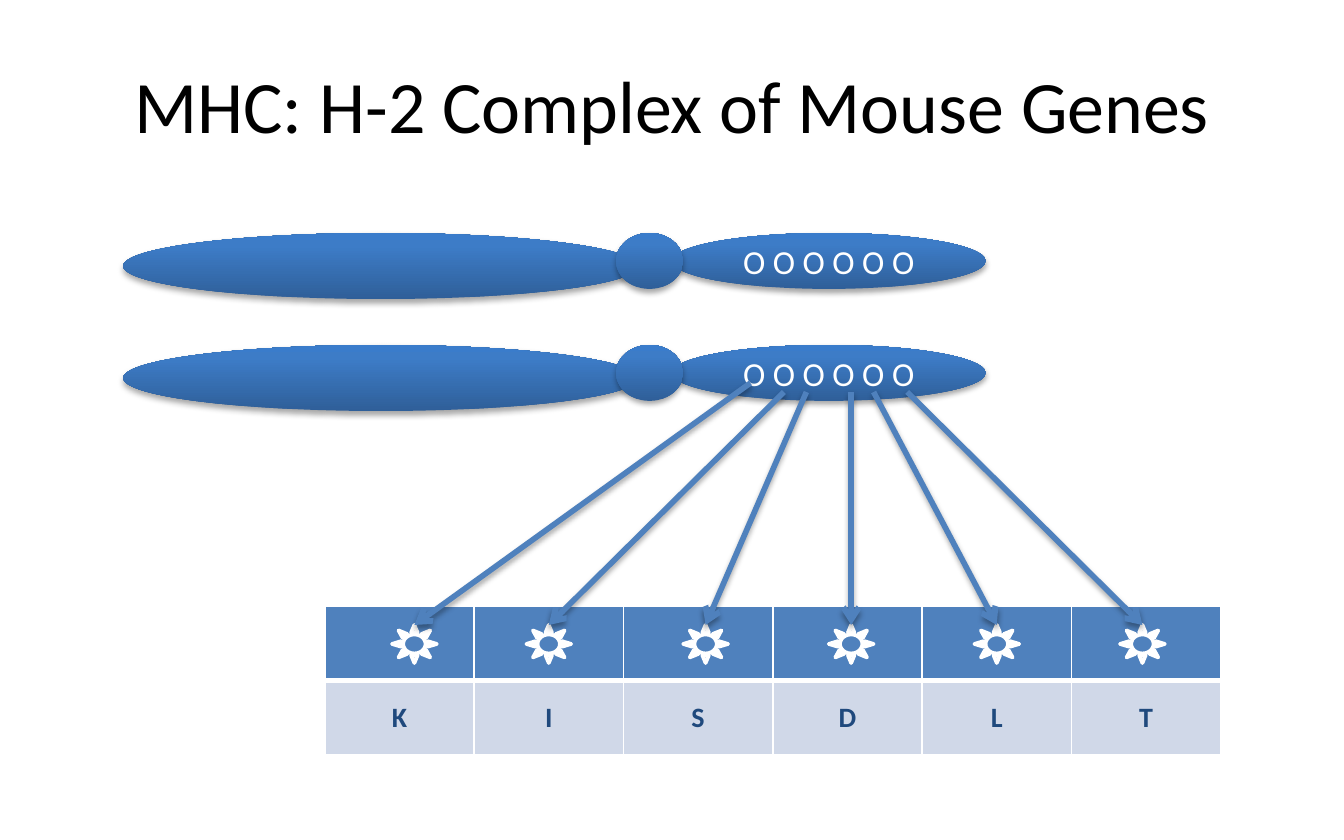
import copy
from dataclasses import dataclass

from lxml import etree
from pptx import Presentation
from pptx import util as u
from pptx.dml.color import RGBColor
from pptx.enum import shapes, text
from pptx.oxml import parse_xml
from pptx.oxml.ns import nsdecls, qn

SCALE = 7620  # EMU in one px, 120 px to the inch


@dataclass(frozen=True)
class Theme:
    font: str = "Calibri"
    title_size: float = 39.6
    locus_size: float = 18
    label_size: float = 15
    black: str = "000000"
    white: str = "FFFFFF"
    blue: str = "4F81BD"
    pale: str = "D0D8E8"
    navy: str = "1F497D"
    gradient: tuple = ((0, "2F5F99"), (0.8, "3D7CC7"), (1, "3A7CCB"))


T = Theme()
GENES = "KISDLT"


def px(*lengths):
    return [u.Emu(round(n * SCALE)) for n in lengths]


def rgb(code):
    return RGBColor.from_string(code)


def add_run(tf, words, size, color, bold=False):
    p = tf.paragraphs[0]
    p.alignment = text.PP_ALIGN.CENTER
    r = p.add_run()
    r.text = words
    r.font.name = T.font
    r.font.size = u.Pt(size)
    r.font.bold = bold
    r.font.color.rgb = rgb(color)


def add_shadow(effects):
    effects.append(parse_xml(
        f'<a:outerShdw {nsdecls("a")} blurRad="{u.Pt(3.1)}" dist="{u.Pt(1.8)}" '
        f'dir="5400000" rotWithShape="0"><a:srgbClr val="{T.black}">'
        '<a:alpha val="35000"/></a:srgbClr></a:outerShdw>'))


def add_title(s, box, words):
    sp = s.shapes.title
    sp.left, sp.top, sp.width, sp.height = px(*box)
    tf = sp.text_frame
    tf.word_wrap = True
    tf.auto_size = text.MSO_AUTO_SIZE.NONE
    tf.vertical_anchor = text.MSO_ANCHOR.MIDDLE
    add_run(tf, words, T.title_size, T.black)


def add_lobe(s, box):
    sp = s.shapes.add_shape(shapes.MSO_SHAPE.OVAL, *px(*box))
    sp.line.fill.background()
    sp.fill.gradient()
    sp.fill.gradient_angle = 90
    # A new gradient has two stops; add the third
    stops = sp._element.spPr.find(".//" + qn("a:gsLst"))
    stops.append(copy.deepcopy(stops[-1]))
    for stop, (position, color) in zip(sp.fill.gradient_stops, T.gradient):
        stop.position = position
        stop.color.rgb = rgb(color)
    sp.shadow.inherit = False
    add_shadow(sp._element.spPr.find(qn("a:effectLst")))
    return sp


def add_chromosome(s, left, top):
    # Short arm with the loci, long arm, centromere
    short_arm = add_lobe(s, (left + 490, top, 280, 50))
    tf = short_arm.text_frame
    tf.vertical_anchor = text.MSO_ANCHOR.MIDDLE
    add_run(tf, " ".join("O" * len(GENES)), T.locus_size, T.white)
    add_lobe(s, (left, top, 460, 59))
    add_lobe(s, (left + 440, top, 60, 50))


def set_borders(cell, **widths):
    tc_pr = cell._tc.get_or_add_tcPr()
    for i, side in enumerate("LRTB"):
        tc_pr.insert(i, parse_xml(
            f'<a:ln{side} {nsdecls("a")} w="{u.Pt(widths.get(side, 1))}"><a:solidFill>'
            f'<a:srgbClr val="{T.white}"/></a:solidFill></a:ln{side}>'))


def add_gene_table(s, box):
    left, top, width, height = box
    table = s.shapes.add_table(2, len(GENES), *px(*box)).table
    for row in table.rows:
        row.height = px(height / 2)[0]
    for i, gene in enumerate(GENES):
        table.columns[i].width = px(width / len(GENES))[0]
        head, label = table.cell(0, i), table.cell(1, i)
        for cell, color in ((head, T.blue), (label, T.pale)):
            cell.fill.solid()
            cell.fill.fore_color.rgb = rgb(color)
            cell.vertical_anchor = text.MSO_ANCHOR.MIDDLE
        set_borders(head, B=3)
        set_borders(label, T=3)
        add_run(label.text_frame, gene, T.label_size, T.navy, bold=True)


def add_sun(s, left, top):
    sp = s.shapes.add_shape(shapes.MSO_SHAPE.SUN, *px(left, top, 40, 34))
    sp.shadow.inherit = False
    sp.fill.solid()
    sp.fill.fore_color.rgb = rgb(T.blue)
    sp.line.color.rgb = rgb(T.white)
    sp.line.width = u.Pt(2)
    return sp


def add_arrow(s, start, sun):
    x, y = px(*start)
    line = s.shapes.add_connector(shapes.MSO_CONNECTOR.STRAIGHT, x, y, x, y)
    line.end_connect(sun, 0)
    line.line.color.rgb = rgb(T.blue)
    line.line.width = u.Pt(3)
    etree.SubElement(line.line._get_or_add_ln(), qn("a:tailEnd"), type="arrow")
    add_shadow(etree.SubElement(line._element.spPr, qn("a:effectLst")))


def add_gene_map(s, box):
    left, top, width, height = box
    # Table of genes, with one sun for each
    add_gene_table(s, box)
    suns = [add_sun(s, left + dx, top + 17) for dx in (60, 180, 320, 450, 580, 710)]
    # Arrows from the loci to the suns
    starts = ((380, 199), (410, 191), (430, 191), (470, 191), (490, 191), (520, 191))
    for (dx, rise), sun in zip(starts, suns):
        add_arrow(s, (left + dx, top - rise), sun)


def main():
    prs = Presentation()
    prs.slide_width, prs.slide_height = px(1200, 750)
    s = prs.slides.add_slide(prs.slide_layouts[5])
    add_title(s, (60, 30, 1080, 125), "MHC: H-2 Complex of Mouse Genes")
    for top in (208, 308):
        add_chromosome(s, 110, top)
    add_gene_map(s, (290, 541, 800, 133))
    prs.save("out.pptx")


if __name__ == "__main__":
    main()
